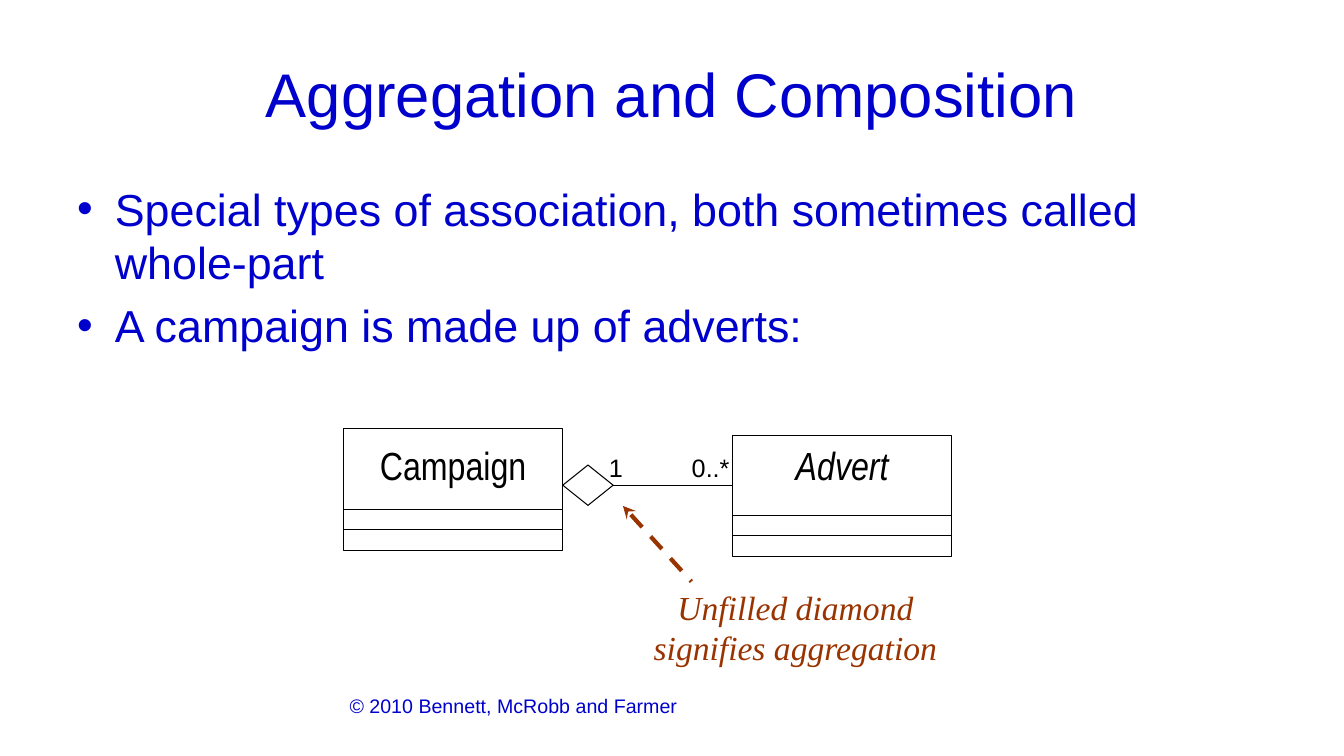
from dataclasses import dataclass
from typing import Optional

from lxml.etree import SubElement
from pptx import Presentation
from pptx.dml.color import RGBColor
from pptx.enum.dml import MSO_LINE
from pptx.enum.shapes import MSO_CONNECTOR, MSO_SHAPE
from pptx.enum.text import MSO_ANCHOR, PP_ALIGN
from pptx.oxml.ns import qn
from pptx.util import Pt


@dataclass(frozen=True)
class Theme:
    blue: str = "0000CC"
    black: str = "000000"
    rust: str = "993300"
    sans: str = "Arial"
    narrow: str = "Arial Narrow"
    serif: str = "Times New Roman"
    title: float = 44
    body: float = 32
    class_name: float = 28
    note: float = 24
    multiplicity: float = 18
    footer: float = 14
    thin: float = 0.75
    thick: float = 3


@dataclass(frozen=True)
class UmlClass:
    name: str
    x: float
    y: float
    abstract: bool = False


@dataclass(frozen=True)
class Multiplicity:
    text: str
    x: float
    w: float


T = Theme()
CLASS_W, CLASS_H = 156.7, 87
DIVIDERS = (57.6, 72)
NAME_Y, NAME_H = 315.4, 33.8
LINK_Y = 346.6
DIAMOND_W, DIAMOND_H = 36, 28.8

CAMPAIGN = UmlClass("Campaign", 245.3, 306)
ADVERT = UmlClass("Advert", 523.2, 310.8, abstract=True)
MULTIPLICITIES = (Multiplicity("1", 434.9, 10), Multiplicity("0..*", 493.9, 27.4))
BULLETS = (
    "Special types of association, both sometimes called whole-part",
    "A campaign is made up of adverts:",
)


def add_text(s, text: str, x: float, y: float, w: float, h: float, *, size: float,
             color: str = T.black, font: str = T.sans, italic: bool = False,
             align: PP_ALIGN = PP_ALIGN.CENTER, anchor: MSO_ANCHOR = MSO_ANCHOR.TOP,
             wrap: bool = True, inset: bool = True, bullet: Optional[str] = None,
             gap: float = 0) -> None:
    tf = s.shapes.add_textbox(Pt(x), Pt(y), Pt(w), Pt(h)).text_frame
    tf.word_wrap = wrap
    tf.vertical_anchor = anchor
    if not inset:
        tf.margin_left = tf.margin_right = tf.margin_top = tf.margin_bottom = 0
    for i, line in enumerate(text.split("\n")):
        p = tf.paragraphs[0] if i == 0 else tf.add_paragraph()
        p.alignment = align
        if i:
            p.space_before = Pt(gap)
        if bullet:
            pPr = p._p.get_or_add_pPr()
            pPr.set("marL", str(Pt(27)))
            pPr.set("indent", str(Pt(-27)))
            SubElement(pPr, qn("a:buFont")).set("typeface", T.sans)
            SubElement(pPr, qn("a:buChar")).set("char", bullet)
        r = p.add_run()
        r.text = line
        r.font.name = font
        r.font.size = Pt(size)
        r.font.italic = italic
        r.font.color.rgb = RGBColor.from_string(color)


def add_line(s, x1: float, y1: float, x2: float, y2: float, color: str = T.black,
             width: float = T.thin, arrow: bool = False) -> None:
    sp = s.shapes.add_connector(MSO_CONNECTOR.STRAIGHT, Pt(x1), Pt(y1), Pt(x2), Pt(y2))
    sp.line.color.rgb = RGBColor.from_string(color)
    sp.line.width = Pt(width)
    if arrow:
        sp.line.dash_style = MSO_LINE.DASH
        SubElement(sp.line._get_or_add_ln(), qn("a:headEnd")).set("type", "stealth")
    SubElement(sp._element.spPr, qn("a:effectLst"))


def add_outline(s, kind: MSO_SHAPE, x: float, y: float, w: float, h: float) -> None:
    sp = s.shapes.add_shape(kind, Pt(x), Pt(y), Pt(w), Pt(h))
    sp.shadow.inherit = False
    sp.fill.background()
    sp.line.color.rgb = RGBColor.from_string(T.black)
    sp.line.width = Pt(T.thin)


def add_class(s, c: UmlClass) -> None:
    add_outline(s, MSO_SHAPE.RECTANGLE, c.x, c.y, CLASS_W, CLASS_H)
    add_text(s, c.name, c.x, NAME_Y, CLASS_W, NAME_H, size=T.class_name,
             font=T.narrow, italic=c.abstract, wrap=False, inset=False)
    for dy in DIVIDERS:
        add_line(s, c.x, c.y + dy, c.x + CLASS_W, c.y + dy)


def main() -> None:
    prs = Presentation()
    prs.slide_width, prs.slide_height = Pt(960), Pt(540)
    s = prs.slides.add_slide(prs.slide_layouts[6])

    add_text(s, "© 2010 Bennett, McRobb and Farmer", 242.6, 491.8, 439.2, 37.4,
             size=T.footer, color=T.blue, align=PP_ALIGN.LEFT)
    add_text(s, "Aggregation and Composition", 48, 21.6, 864, 90,
             size=T.title, color=T.blue, anchor=MSO_ANCHOR.MIDDLE)
    add_text(s, "\n".join(BULLETS), 48, 126, 864, 356.4, size=T.body, color=T.blue,
             align=PP_ALIGN.LEFT, bullet="•", gap=6.4)

    for c in (CAMPAIGN, ADVERT):
        add_class(s, c)
    diamond_x = CAMPAIGN.x + CLASS_W
    add_outline(s, MSO_SHAPE.DIAMOND, diamond_x, LINK_Y - DIAMOND_H / 2,
                DIAMOND_W, DIAMOND_H)
    add_line(s, diamond_x + DIAMOND_W, LINK_Y, ADVERT.x, LINK_Y)
    for m in MULTIPLICITIES:
        add_text(s, m.text, m.x, 323.3, m.w, 21.6, size=T.multiplicity,
                 wrap=False, inset=False)

    add_text(s, "Unfilled diamond signifies aggregation", 452.2, 415.4, 231.8, 65.5,
             size=T.note, color=T.rust, font=T.serif, italic=True)
    add_line(s, 445, 361.4, 493.9, 415.4, T.rust, T.thick, arrow=True)

    prs.save("out.pptx")


if __name__ == "__main__":
    main()
